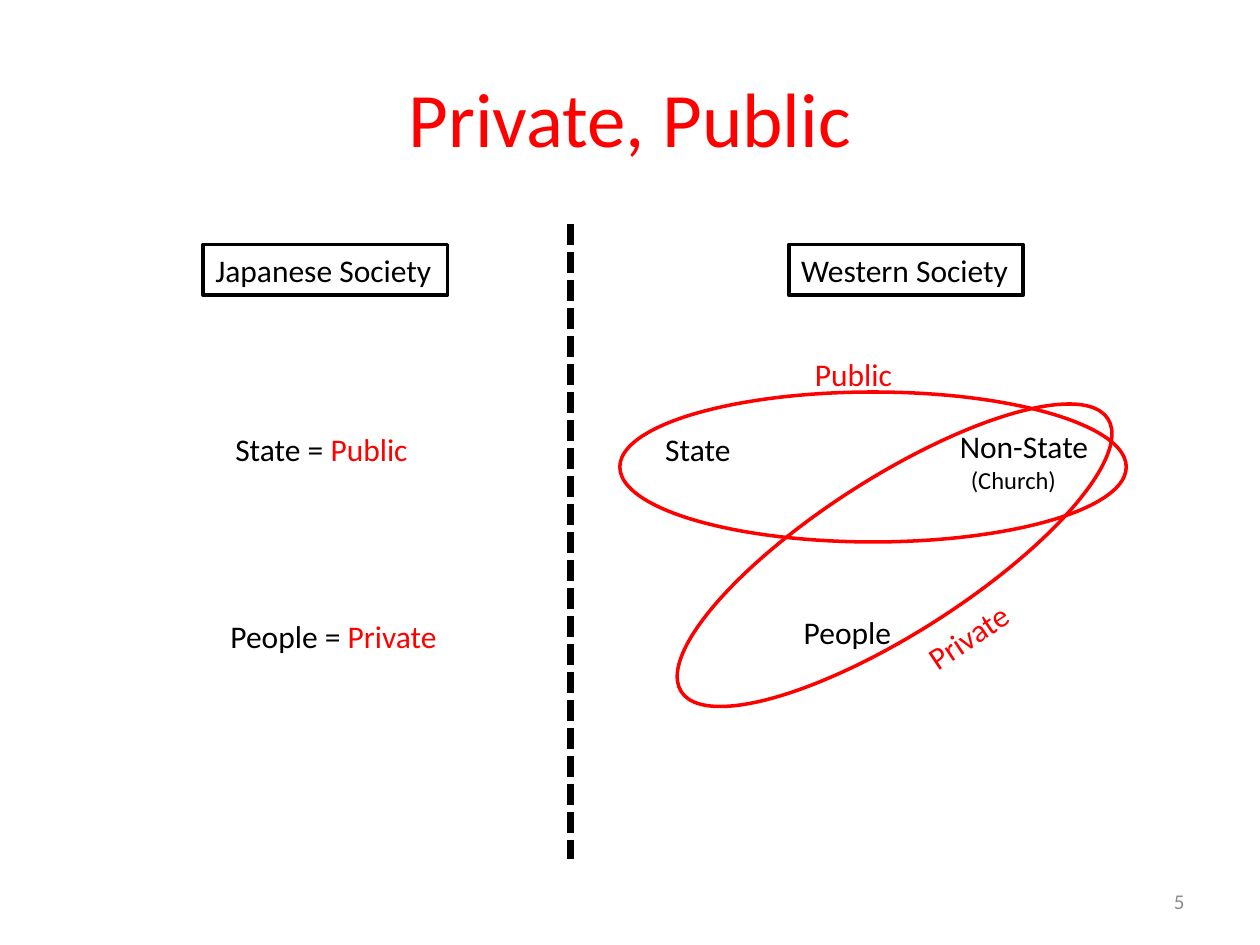
"""Build the slide that contrasts private and public in two societies."""
from dataclasses import dataclass

from lxml import etree
from pptx import Presentation
from pptx import util as u
from pptx.dml.color import RGBColor
from pptx.enum import dml, shapes, text
from pptx.oxml.ns import qn


@dataclass(frozen=True)
class Theme:
    """Fonts, colours, type sizes and line widths."""
    font: str = "Calibri"
    ink: str = "000000"
    accent: str = "FF0000"
    muted: str = "8C8C8C"
    title: float = 44
    body: float = 18
    note: float = 14
    number: float = 12
    outline: float = 2
    divider: float = 4


def write(p, content, *, theme, size=None, color=None):
    """Append a formatted run to a paragraph."""
    r = p.add_run()
    r.text = content
    r.font.name = theme.font
    r.font.size = u.Pt(size or theme.body)
    r.font.color.rgb = RGBColor.from_string(color or theme.ink)


class SlideBuilder:
    """Draw elements on the current slide in one style."""

    def __init__(self, s, theme):
        """Keep the slide and its theme."""
        self.s, self.theme = s, theme

    def title(self, content, box):
        """Place and fill the title placeholder."""
        sp = self.s.shapes.title
        sp.left, sp.top, sp.width, sp.height = map(u.Pt, box)
        tf = sp.text_frame
        tf.vertical_anchor = text.MSO_ANCHOR.MIDDLE
        p = tf.paragraphs[0]
        p.alignment = text.PP_ALIGN.CENTER
        write(p, content, theme=self.theme, size=self.theme.title, color=self.theme.accent)

    def label(self, runs, box, *, wrap=False, rotation=0, framed=False):
        """Add a text box from (text, colour) pairs."""
        sp = self.s.shapes.add_textbox(*map(u.Pt, box))
        sp.rotation = rotation
        tf = sp.text_frame
        tf.word_wrap = wrap
        tf.auto_size = text.MSO_AUTO_SIZE.SHAPE_TO_FIT_TEXT
        for content, color in runs:
            write(tf.paragraphs[0], content, theme=self.theme, color=color)
        if framed:
            self.outline(sp, self.theme.ink)
        return sp

    def subtext(self, sp, content, indent):
        """Add a smaller indented paragraph to a label."""
        p = sp.text_frame.add_paragraph()
        p._p.get_or_add_pPr().set("marL", str(u.Pt(indent)))
        write(p, content, theme=self.theme, size=self.theme.note)

    def number(self, content, box):
        """Add the slide number."""
        tf = self.s.shapes.add_textbox(*map(u.Pt, box)).text_frame
        tf.word_wrap = True
        tf.vertical_anchor = text.MSO_ANCHOR.MIDDLE
        p = tf.paragraphs[0]
        p.alignment = text.PP_ALIGN.RIGHT
        write(p, content, theme=self.theme, size=self.theme.number, color=self.theme.muted)

    def outline(self, sp, color):
        """Outline a shape in one colour."""
        sp.line.color.rgb = RGBColor.from_string(color)
        sp.line.width = u.Pt(self.theme.outline)

    def ellipse(self, box, rotation=0):
        """Add an unfilled accent ellipse."""
        sp = self.s.shapes.add_shape(shapes.MSO_SHAPE.OVAL, *map(u.Pt, box))
        sp.rotation = rotation
        sp.shadow.inherit = False
        sp.fill.background()
        self.outline(sp, self.theme.accent)

    def divider(self, x, top, bottom):
        """Add a dashed vertical line."""
        ends = map(u.Pt, (x, top, x, bottom))
        cx = self.s.shapes.add_connector(shapes.MSO_CONNECTOR.STRAIGHT, *ends)
        cx.line.color.rgb = RGBColor.from_string(self.theme.ink)
        cx.line.width = u.Pt(self.theme.divider)
        cx.line.dash_style = dml.MSO_LINE.SQUARE_DOT
        cx.line._ln.find(qn("a:prstDash")).set("val", "sysDash")
        etree.SubElement(cx._element.spPr, qn("a:effectLst"))


def main():
    """Compose and save the slide."""
    prs = Presentation()
    prs.slide_width, prs.slide_height = u.Pt(720), u.Pt(540)
    theme = Theme()
    b = SlideBuilder(prs.slides.add_slide(prs.slide_layouts[5]), theme)
    ink, red = theme.ink, theme.accent
    line_h, state_y, people_y = 29, 242, 349

    b.title("Private, Public", (36, 21.6, 648, 90))
    b.number("5", (516.2, 500.4, 167.8, 28.8))
    for name, x, w in (("Japanese", 116, 139.7), ("Western", 450.7, 134)):
        b.label([(f"{name} Society", ink)], (x, 139.7, w, line_h), framed=True)
    for who, sphere, x, y in (("State", "Public", 127.4, state_y),
                              ("People", "Private", 124.6, people_y)):
        b.label([(f"{who} = ", ink), (sphere, red)], (x, y, 187.2, line_h), wrap=True)

    b.label([("State", ink)], (373, state_y, 56.2, line_h))
    church = b.label([("Non-State", ink)], (541.4, 240.5, 88.6, 46))
    b.subtext(church, "(Church)", 6.3)
    b.label([("People", ink)], (452.2, 347, 64.8, line_h))
    b.ellipse((354.2, 224, 289.4, 85.7))
    b.label([("Public", red)], (458.6, 199.4, 59, line_h))
    b.ellipse((366.5, 273, 289.4, 88.6), rotation=327.4)
    b.label([("Private", red)], (520.6, people_y, 65.5, line_h), rotation=326.3)
    b.divider(326.2, 128.2, 491)
    prs.save("out.pptx")


if __name__ == "__main__":
    main()
